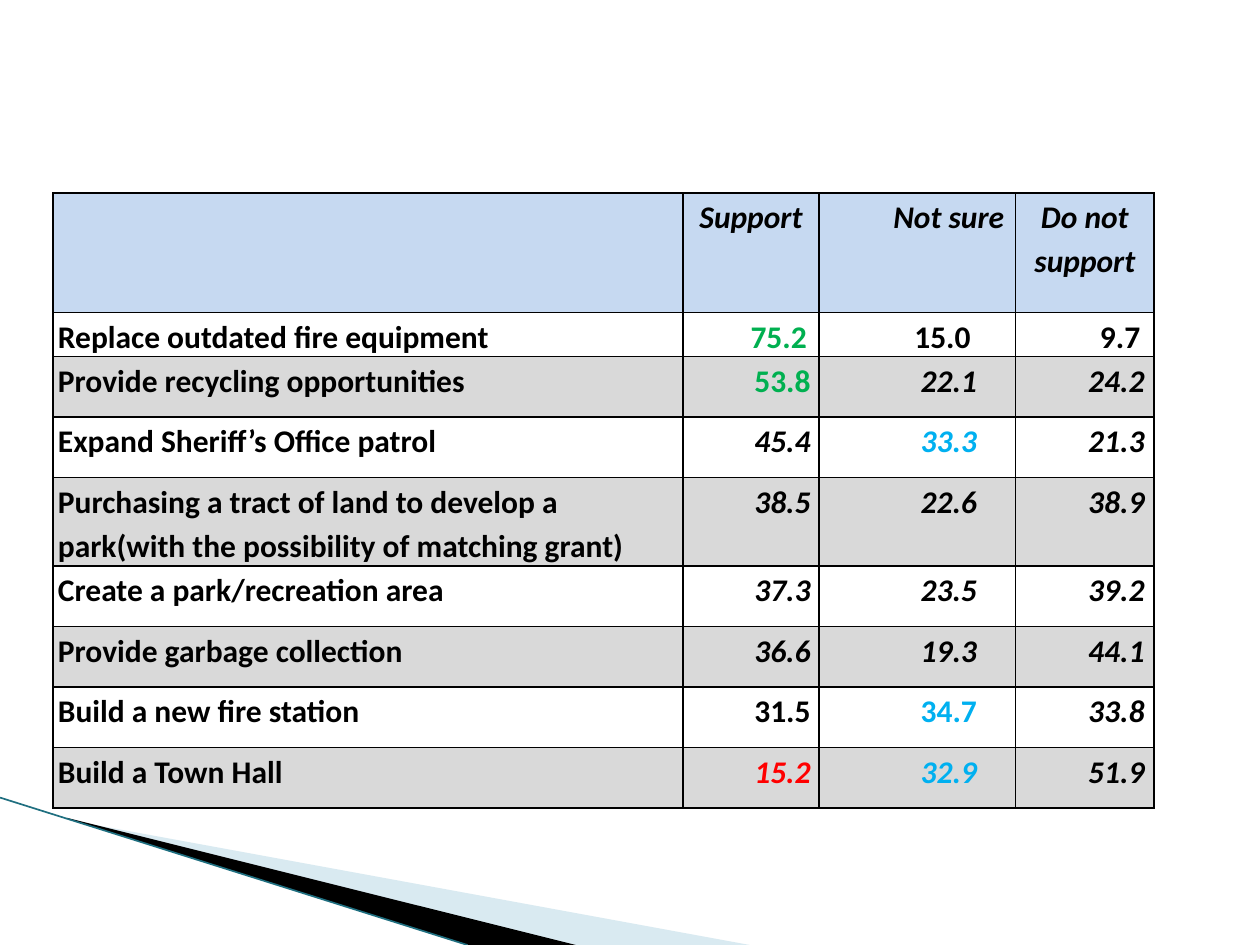
from lxml import etree
from pptx import Presentation
from pptx.dml.color import RGBColor
from pptx.enum.shapes import MSO_CONNECTOR
from pptx.enum.text import PP_ALIGN
from pptx.oxml.ns import qn
from pptx.util import Inches, Pt

CENTER, LEFT = PP_ALIGN.CENTER, PP_ALIGN.LEFT
STRAIGHT = MSO_CONNECTOR.STRAIGHT
BLACK, GREEN, BLUE, RED = "000000", "00B050", "00B0F0", "FF0000"
HEADER_FILL, BAND_FILL = "C6D9F1", "D9D9D9"


def color(value):
    return RGBColor.from_string(value)


def add_borders(cell):
    """Draw a 1 pt black line on every side of a cell."""
    properties = cell._tc.get_or_add_tcPr()
    for index, side in enumerate(("lnL", "lnR", "lnT", "lnB")):
        line = etree.Element(qn(f"a:{side}"), w=str(Pt(1)))
        fill = etree.SubElement(line, qn("a:solidFill"))
        etree.SubElement(fill, qn("a:srgbClr"), val=BLACK)
        properties.insert(index, line)


deck = Presentation()
deck.slide_width, deck.slide_height = Inches(10), Inches(7.5)
page = deck.slides.add_slide(deck.slide_layouts[6])

# Wedges in the bottom left corner: points, fill, opacity in percent
wedges = [
    ([(0.55, 6.51), (5.95, 7.5), (4.56, 7.5), (0.55, 6.5)], "A0CBDC", 40),
    ([(0.53, 6.49), (4.57, 7.5), (3.72, 7.5), (0.54, 6.5)], BLACK, 100),
]
for points, fill, opacity in wedges:
    corners = [(Inches(x), Inches(y)) for x, y in points]
    builder = page.shapes.build_freeform(*corners[0])
    builder.add_line_segments(corners[1:])
    wedge = builder.convert_to_shape()
    wedge.shadow.inherit = False
    wedge.line.fill.background()
    wedge.fill.solid()
    wedge.fill.fore_color.rgb = color(fill)
    tint = wedge._element.spPr.find(f".//{qn('a:srgbClr')}")
    etree.SubElement(tint, qn("a:alpha"), val=str(opacity * 1000))

# Thin line along the wedges
edge = page.shapes.add_connector(
    STRAIGHT, Inches(0), Inches(6.33), Inches(3.71), Inches(7.5))
edge.line.color.rgb = color("1F6F80")
edge.line.width = Pt(0.95)
etree.SubElement(edge._element.spPr, qn("a:effectLst"))

# Survey table: each cell is text, colour, italic, left indent in inches
rows = [
    [("", BLACK, False, 0), ("Support", BLACK, True, 0),
     ("Not sure", BLACK, True, 0.5), ("Do not support", BLACK, True, 0)],
    [("Replace outdated fire equipment", BLACK, False, 0), ("75.2", GREEN, False, 0.44),
     ("15.0", BLACK, False, 0.4), ("9.7", BLACK, False, 0.56)],
    [("Provide recycling opportunities", BLACK, False, 0), ("53.8", GREEN, False, 0.5),
     ("22.1", BLACK, True, 0.5), ("24.2", BLACK, True, 0.5)],
    [("Expand Sheriff’s Office patrol", BLACK, False, 0), ("45.4", BLACK, True, 0.5),
     ("33.3", BLUE, True, 0.5), ("21.3", BLACK, True, 0.5)],
    [("Purchasing a tract of land to develop a park(with the possibility of matching grant)",
      BLACK, False, 0), ("38.5", BLACK, True, 0.5),
     ("22.6", BLACK, True, 0.5), ("38.9", BLACK, True, 0.5)],
    [("Create a park/recreation area", BLACK, False, 0), ("37.3", BLACK, True, 0.5),
     ("23.5", BLACK, True, 0.5), ("39.2", BLACK, True, 0.5)],
    [("Provide garbage collection", BLACK, False, 0), ("36.6", BLACK, True, 0.5),
     ("19.3", BLACK, True, 0.5), ("44.1", BLACK, True, 0.5)],
    [("Build a new fire station", BLACK, False, 0), ("31.5", BLACK, False, 0.5),
     ("34.7", BLUE, False, 0.5), ("33.8", BLACK, True, 0.5)],
    [("Build a Town Hall", BLACK, False, 0), ("15.2", RED, True, 0.5),
     ("32.9", BLUE, True, 0.5), ("51.9", BLACK, True, 0.5)],
]
widths = [5, 1.08, 1.56, 1.1]
heights = [0.95, 0.35, 0.48, 0.48, 0.7, 0.48, 0.48, 0.48, 0.48]

table = page.shapes.add_table(
    len(rows), len(widths), Inches(0.42), Inches(1.53),
    Inches(sum(widths)), Inches(sum(heights))).table
table.horz_banding = False
for column, width in zip(table.columns, widths):
    column.width = Inches(width)
for row, height in zip(table.rows, heights):
    row.height = Inches(height)

for row_index, row in enumerate(rows):
    for column_index, (text, text_color, italic, indent) in enumerate(row):
        cell = table.cell(row_index, column_index)
        cell.margin_left = cell.margin_right = Inches(0.04)
        cell.margin_top = cell.margin_bottom = 0
        if row_index == 0 or row_index % 2 == 0:
            cell.fill.solid()
            cell.fill.fore_color.rgb = color(BAND_FILL if row_index else HEADER_FILL)
        else:
            cell.fill.background()
        add_borders(cell)

        para = cell.text_frame.paragraphs[0]
        para.text = text
        para.alignment = CENTER if column_index else LEFT
        para.line_spacing = 1.15
        if indent:
            para._p.get_or_add_pPr().set("marL", str(Inches(indent)))
        para.font.name = "Calibri"
        para.font.size = Pt(18)
        para.font.bold = True
        para.font.italic = italic
        para.font.color.rgb = color(text_color)

deck.save("out.pptx")
